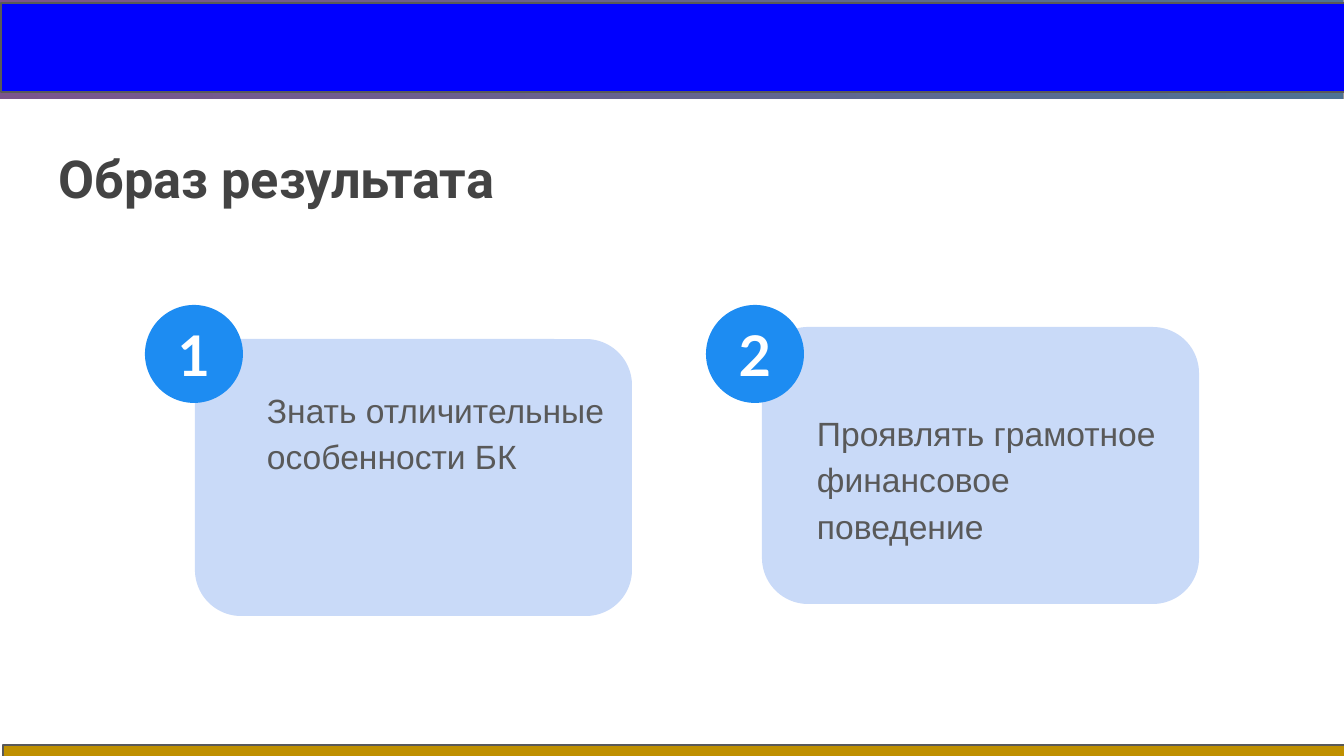
"""Build the slide with two numbered learning outcomes."""
from lxml.etree import SubElement
from pptx import Presentation
from pptx.dml.color import RGBColor
from pptx.enum.shapes import MSO_SHAPE as Shape
from pptx.enum.text import MSO_ANCHOR as Anchor, PP_ALIGN as Align
from pptx.oxml.ns import qn
from pptx.util import Pt

PX = 9144000 / 1344
COLORS = {
    "purple": "A734DC", "azure": "1D8CF2", "veil": "666666", "card": "C9DAF8",
    "title": "434343", "body": "595959", "white": "FFFFFF",
    "blue": "0000FF", "gold": "BF9000",
}


def add_block(kind, box, color, outline=None):
    block = slide.shapes.add_shape(kind, *[round(v * PX) for v in box])
    block.shadow.inherit = False
    block.fill.solid()
    block.fill.fore_color.rgb = RGBColor.from_string(COLORS[color])
    if outline:
        block.line.color.rgb = RGBColor.from_string(COLORS[outline])
        block.line.width = Pt(0.75)
    else:
        block.line.fill.background()
    return block


def write(holder, lines, font, size, color, bold=False, anchor=Anchor.TOP,
          align=Align.LEFT, spacing=1.0):
    frame = holder.text_frame
    frame.word_wrap = True
    frame.vertical_anchor = anchor
    frame.margin_left = frame.margin_right = round(13 * PX)
    frame.margin_top = frame.margin_bottom = round(13 * PX)
    frame.text = "\n".join(lines)
    for paragraph in frame.paragraphs:
        paragraph.alignment = align
        paragraph.line_spacing = spacing
        paragraph.font.name = font
        paragraph.font.size = Pt(size)
        paragraph.font.bold = bold
        paragraph.font.color.rgb = RGBColor.from_string(COLORS[color])


deck = Presentation()
deck.slide_width = round(1344 * PX)
deck.slide_height = round(756 * PX)
slide = deck.slides.add_slide(deck.slide_layouts[6])

header = add_block(Shape.RECTANGLE, (-1, 0, 1344, 99), "purple")
header.fill.gradient()
header.fill.gradient_angle = 0
for stop, color, position in zip(header.fill.gradient_stops, ("purple", "azure"), (0, 1)):
    stop.color.rgb = RGBColor.from_string(COLORS[color])
    stop.position = position

veil = add_block(Shape.RECTANGLE, (-1, 0, 1346, 99), "veil")
veil_color = next(veil.fill._xPr.iter(qn("a:srgbClr")))
SubElement(veil_color, qn("a:alpha"), val="67000")

for left, top in ((762, 327), (195, 339)):
    add_block(Shape.ROUNDED_RECTANGLE, (left, top, 437, 277), "card")

title = slide.shapes.add_textbox(*[round(v * PX) for v in (46, 133, 1253, 85)])
write(title, ["Образ результата"], "Roboto", 28, "title", bold=True)

for number, left in (("1", 145), ("2", 706)):
    badge = add_block(Shape.OVAL, (left, 305, 98, 98), "azure")
    write(badge, [number], "Lato", 30, "white", bold=True,
          anchor=Anchor.MIDDLE, align=Align.CENTER)

outcomes = (
    ((804, 392, 383, 169), Anchor.MIDDLE, ["Проявлять грамотное финансовое", "поведение"]),
    ((254, 371, 414, 194), Anchor.TOP, ["Знать отличительные особенности БК"]),
)
for box, anchor, lines in outcomes:
    outcome = slide.shapes.add_textbox(*[round(v * PX) for v in box])
    write(outcome, lines, "Arial", 18, "body", anchor=anchor, spacing=1.15)

add_block(Shape.RECTANGLE, (1, 3, 1344, 89), "blue", outline="body")
add_block(Shape.RECTANGLE, (3, 745, 1344, 13), "gold", outline="body")

deck.save("out.pptx")
